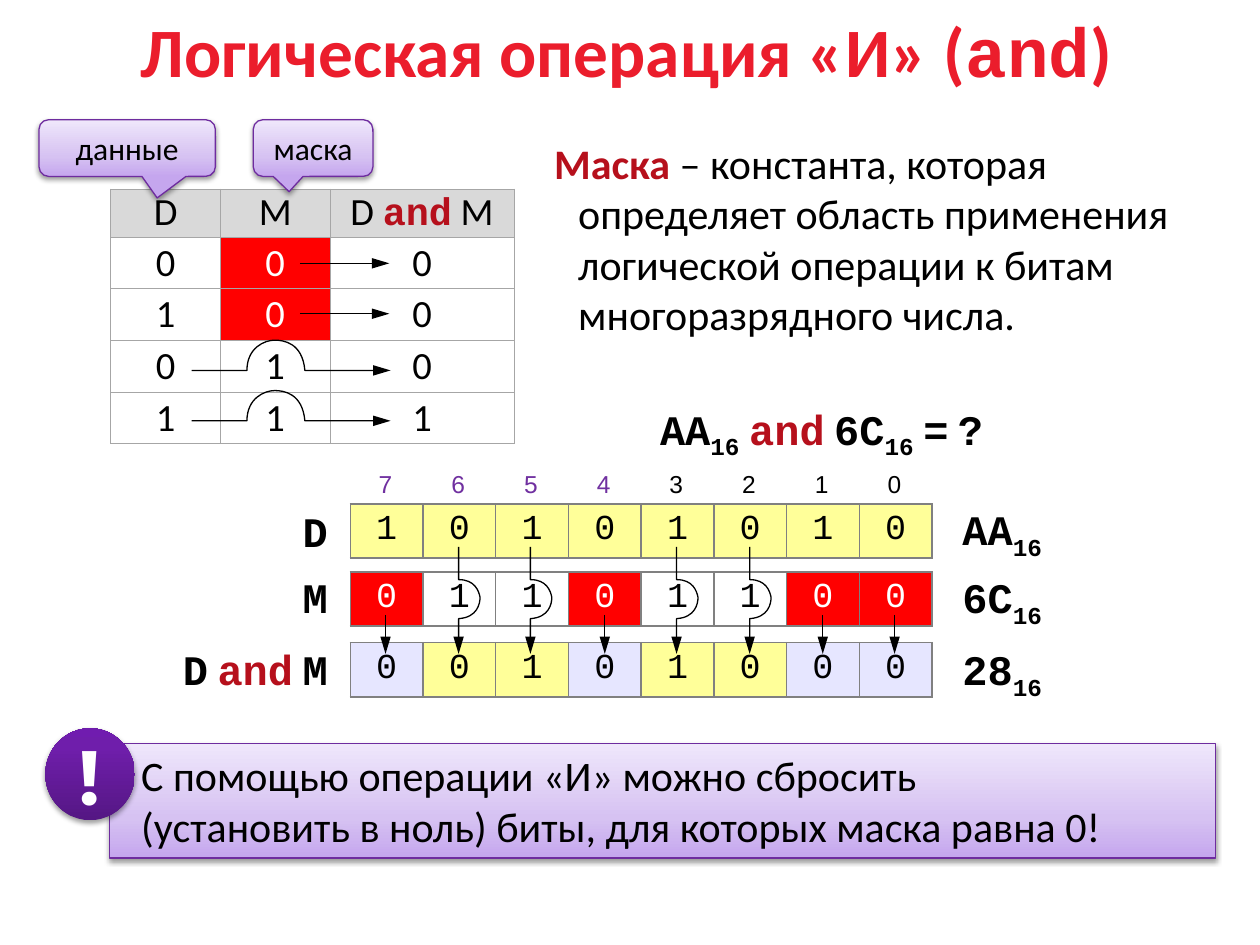
from lxml import etree
from pptx import Presentation, oxml
from pptx import util as u
from pptx.dml import color as dml
from pptx.enum import shapes, text
from pptx.oxml import ns

Inches = u.Inches
C = {"title": "EB1D2C", "key": "B6101C", "black": "000000", "white": "FFFFFF",
     "head": "D9D9D9", "red": "FF0000", "yellow": "FFFF99", "pale": "E6E6FF",
     "high": "7030A0", "edge": "6E2C9F", "light": "A6A6A6", "grey": "808080"}
MONO, SANS = "Courier New", "Calibri"
LEFT, MID, RIGHT = text.PP_ALIGN.LEFT, text.PP_ALIGN.CENTER, text.PP_ALIGN.RIGHT
KEY, GAP, SUB = {"color": "key"}, {"font": SANS}, {"base": -25000}
A = ns.nsdecls("a")

deck = Presentation()
deck.slide_width, deck.slide_height = Inches(10), Inches(7.5)
slide = deck.slides.add_slide(deck.slide_layouts[6])
items = slide.shapes


def put(frame, parts, align=LEFT, hang=0, **base):
    """Fill a frame with runs; a part is plain text or (text, own format)."""
    para = frame.paragraphs[0]
    para.alignment = align
    if hang:
        props = para._p.get_or_add_pPr()
        props.set("marL", str(Inches(hang)))
        props.set("indent", str(-Inches(hang)))
    for part in parts:
        if part == "\n":
            para.add_line_break()
            continue
        words, own = (part, {}) if isinstance(part, str) else part
        look = {"size": 24, "font": SANS, "color": "black", "bold": False, **base, **own}
        run = para.add_run()
        run.text = words
        run.font.size, run.font.name = u.Pt(look["size"]), look["font"]
        run.font.bold = look["bold"]
        run.font.color.rgb = dml.RGBColor.from_string(C[look["color"]])
        if "base" in look:
            run._r.get_or_add_rPr().set("baseline", str(look["base"]))


def arrow(line):
    """Give a line or an open path its thin black stroke and arrowhead."""
    line.line.color.rgb = dml.RGBColor.from_string(C["black"])
    line.line.width = u.Pt(0.75)
    tail = etree.SubElement(line.line._get_or_add_ln(), ns.qn("a:tailEnd"))
    tail.set("type", "triangle")
    tail.set("len", "lg")
    etree.SubElement(line._element.spPr, ns.qn("a:effectLst"))


# Tables: every cell is (parts, fill, text colour)
truth = [[(["D"], "head", "black"), (["M"], "head", "black"),
          (["D ", ("and", {**KEY, "font": MONO, "bold": True}), " M"], "head", "black")]]
for d, m in ((0, 0), (1, 0), (0, 1), (1, 1)):
    fill, ink = (None, "black") if m else ("red", "white")
    truth.append([([str(d)], None, "black"), ([str(m)], fill, ink),
                  ([str(d & m)], None, "black")])

data, mask = "10101010", "01101100"
both = "".join(str(int(d) & int(m)) for d, m in zip(data, mask))
ranks = [([str(n)], None, "high" if n > 3 else "black") for n in range(7, -1, -1)]
top_bits = [([d], "yellow", "black") for d in data]
mid_bits = [([m], *(("white", "black") if m == "1" else ("red", "white"))) for m in mask]
low_bits = [([b], "yellow" if m == "1" else "pale", "black") for b, m in zip(both, mask)]

bits = [4.62 / 8] * 8
small, big = (0.1, 0.05), (0.14, 0)
tables = [
    (0.88, 1.5, [0.87, 0.87, 1.46], [0.38] + [0.41] * 4, truth, 22, SANS, "light", 0.5, big),
    (2.78, 4, bits, [0.43], [top_bits], 20, MONO, "grey", 1, small),
    (2.78, 4.54, bits, [0.43], [mid_bits], 20, MONO, "grey", 1, small),
    (2.78, 5.1, bits, [0.43], [low_bits], 20, MONO, "grey", 1, small),
    (2.77, 3.69, bits, [0.33], [ranks], 14, "Arial", None, 0, small),
]
for x, y, wide, tall, rows, size, font, edge, thick, pad in tables:
    grid = items.add_table(len(tall), len(wide), Inches(x), Inches(y),
                           Inches(sum(wide)), Inches(sum(tall))).table
    grid.first_row = grid.horz_banding = False
    for col, w in zip(grid.columns, wide):
        col.width = Inches(w)
    for row, h in zip(grid.rows, tall):
        row.height = Inches(h)
    for r, row in enumerate(rows):
        for c, (parts, fill, color) in enumerate(row):
            cell = grid.cell(r, c)
            cell.margin_left = cell.margin_right = Inches(pad[0])
            cell.margin_top = cell.margin_bottom = Inches(pad[1])
            if r:
                cell.vertical_anchor = text.MSO_ANCHOR.MIDDLE
            for side in "LRTB":
                stroke = (f'<a:solidFill><a:srgbClr val="{C[edge]}"/></a:solidFill>'
                          if edge else "<a:noFill/>")
                cell._tc.get_or_add_tcPr().append(oxml.parse_xml(
                    f'<a:ln{side} {A} w="{u.Pt(thick)}">{stroke}</a:ln{side}>'))
            if fill:
                cell.fill.solid()
                cell.fill.fore_color.rgb = dml.RGBColor.from_string(C[fill])
            else:
                cell.fill.background()
            put(cell.text_frame, parts, MID, size=size, font=font, color=color)

# Straight arrows: across the truth table, then down from zero mask bits
spans = [(2.38, y, 3.09, y) for y in (2.09, 2.49)]
spans += [(x, 4.88, x, 5.19) for x in (3.06, 4.8, 6.53, 7.1)]
for span in spans:
    arrow(items.add_connector(shapes.MSO_CONNECTOR.STRAIGHT, *map(Inches, span)))

# Arrows that hop over a mask bit: line, two Bezier curves of three points, line
across = [(0, 0.24), (0.44, 0.24), (0.44, 0.06), (0.58, 0), (0.66, 0),
          (0.73, 0), (0.88, 0.02), (0.9, 0.24), (1.58, 0.24)]
down = [(0, 0), (0, 0.26), (0.13, 0.26), (0.16, 0.35), (0.17, 0.4),
        (0.17, 0.45), (0.15, 0.56), (0, 0.57), (0, 0.85)]
hops = [(1.52, y, across) for y in (2.7, 3.1)]
hops += [(x, 4.34, down) for x in (3.64, 4.21, 5.37, 5.95)]
for x, y, track in hops:
    spots = [(Inches(x + a), Inches(y + b)) for a, b in track]
    pen = items.build_freeform(*spots[0])
    pen.add_line_segments(spots[1:], close=False)
    hop = pen.convert_to_shape()
    lines = list(hop._element.spPr.iter(ns.qn("a:lnTo")))
    for first in (1, 4):
        curve = etree.Element(ns.qn("a:cubicBezTo"))
        lines[first].addprevious(curve)
        for line in lines[first:first + 3]:
            curve.append(line[0])
            line.getparent().remove(line)
    hop.fill.background()
    arrow(hop)

# Callouts, the bottom note and its badge
KIND = shapes.MSO_SHAPE
lilac = ((0, "C5A6EE"), (35, "D6C2F2"), (100, "EFE7FB"))
plum = ((0, "551784"), (80, "6F1EAB"), (100, "701CAF"))
note = ["С помощью операции «И» можно сбросить", "\n",
        "(установить в ноль) биты, для которых маска равна 0!"]
glossy = [
    (KIND.ROUNDED_RECTANGULAR_CALLOUT, (0.31, 0.95, 1.4, 0.45), (0.17, 0.88, 0.17),
     lilac, ["данные"], MID, {"size": 18}),
    (KIND.ROUNDED_RECTANGULAR_CALLOUT, (2.01, 0.95, 0.95, 0.45), (-0.2, 0.77, 0.17),
     lilac, ["маска"], MID, {"size": 18}),
    (KIND.RECTANGLE, (0.87, 5.9, 8.78, 0.91), (), lilac, note, LEFT, {}),
    (KIND.OVAL, (0.36, 5.78, 0.71, 0.73), (), plum, ["!"], MID,
     {"size": 44, "font": "Montserrat", "color": "white", "bold": True}),
]
for kind, box, bends, shades, parts, align, look in glossy:
    shape = items.add_shape(kind, *map(Inches, box))
    for i, bend in enumerate(bends):
        shape.adjustments[i] = bend
    stops = "".join(f'<a:gs pos="{p * 1000}"><a:srgbClr val="{c}"/></a:gs>' for p, c in shades)
    props = shape._element.spPr
    props.append(oxml.parse_xml(f'<a:gradFill {A} rotWithShape="1"><a:gsLst>{stops}</a:gsLst>'
                                '<a:lin ang="16200000" scaled="0"/></a:gradFill>'))
    frame = shape.text_frame
    frame.vertical_anchor = text.MSO_ANCHOR.TOP
    if kind == KIND.OVAL:
        shape.line.fill.background()
        frame.vertical_anchor = text.MSO_ANCHOR.MIDDLE
        frame.word_wrap = False
    else:
        shape.line.color.rgb = dml.RGBColor.from_string(C["edge"])
        shape.line.width = u.Pt(0.75)
    if kind == KIND.RECTANGLE:
        frame.margin_left = Inches(0.25)
    props.append(oxml.parse_xml(
        f'<a:effectLst {A}><a:outerShdw blurRad="{u.Pt(3.1)}" dist="{u.Pt(1.6)}" dir="5400000" '
        'rotWithShape="0"><a:srgbClr val="000000"><a:alpha val="38000"/></a:srgbClr>'
        '</a:outerShdw></a:effectLst>'))
    put(frame, parts, align, **look)

# Title, definition, row labels and results
code = {"font": MONO, "bold": True}
space, also, low = (" ", GAP), ("and", KEY), ("16", SUB)
labels = [
    ((0.47, 0, 9, 0.79), ["Логическая операция «И» (", ("and", {"font": MONO}), ")"], MID,
     {"size": 39.6, "color": "title", "bold": True}),
    ((4.3, 1.04, 5.28, 1.72),
     [("Маска ", {**KEY, "bold": True}), "– константа, которая определяет область применения "
      "логической операции к битам многоразрядного числа."], LEFT, {"hang": 0.19}),
    ((5.14, 3.15, 3.07, 0.51),
     ["AA", low, space, also, space, "6C", low, space, "=", space, "?"], LEFT, code),
    ((2.22, 3.96, 0.48, 0.51), ["D"], RIGHT, code),
    ((2.22, 4.49, 0.48, 0.51), ["M"], RIGHT, code),
    ((1.3, 5.06, 1.4, 0.51), ["D", space, also, space, "M"], RIGHT, code),
    ((7.54, 3.95, 0.88, 0.51), ["AA", low], LEFT, code),
    ((7.54, 4.49, 1.1, 0.51), ["6С", low], LEFT, code),
    ((7.54, 5.06, 0.88, 0.51), ["28", low], LEFT, code),
]
for box, parts, align, look in labels:
    frame = items.add_textbox(*map(Inches, box)).text_frame
    frame.word_wrap = True
    if box[1] == 0:
        frame.vertical_anchor = text.MSO_ANCHOR.MIDDLE
    put(frame, parts, align, **look)

deck.save("out.pptx")
